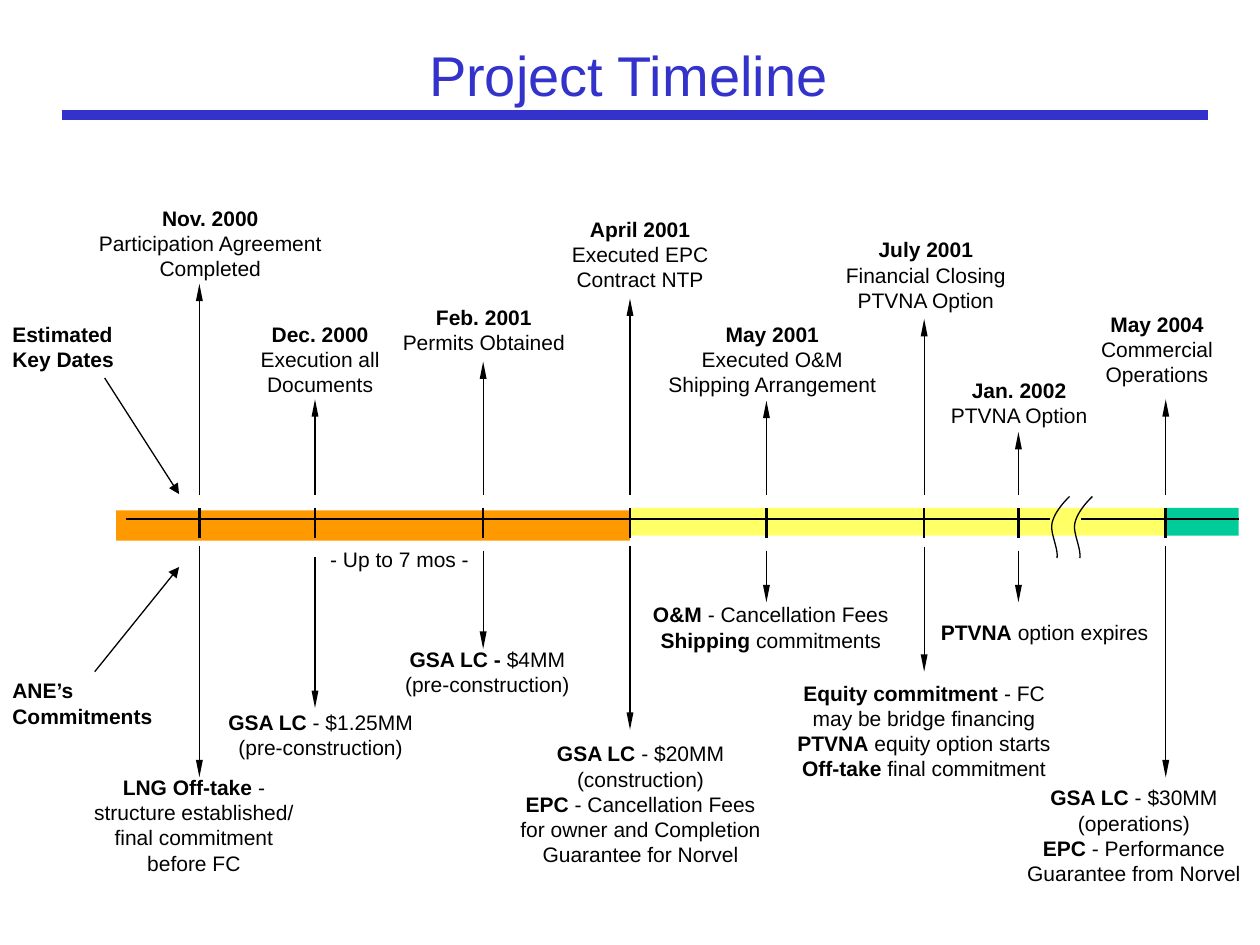
from dataclasses import dataclass
from typing import NamedTuple

from lxml import etree
from pptx import Presentation
from pptx.dml.color import RGBColor
from pptx.enum.shapes import MSO_CONNECTOR, MSO_SHAPE
from pptx.enum.text import MSO_ANCHOR, PP_ALIGN
from pptx.oxml.ns import qn
from pptx.util import Cm, Pt

STRAIGHT = MSO_CONNECTOR.STRAIGHT
RECTANGLE = MSO_SHAPE.RECTANGLE
MIDDLE = MSO_ANCHOR.MIDDLE
LEFT, CENTER = PP_ALIGN.LEFT, PP_ALIGN.CENTER


@dataclass(frozen=True)
class Theme:
    font: str = "Arial"
    title_size: float = 32
    text_size: float = 12
    title: str = "3333CC"
    ink: str = "000000"
    development: str = "FF9900"
    construction: str = "FFFF66"
    operations: str = "00CC99"
    thin: float = 0.75
    tick: float = 1.5
    rule: float = 6


class Box(NamedTuple):
    left: float
    top: float
    width: float
    height: float

    def point(self, x, y):
        return Cm(self.left + x), Cm(self.top + y)


class Label(NamedTuple):
    left: float
    top: float
    width: float
    lines: int
    text: str


class Milestone(NamedTuple):
    x: float
    rise_to: float
    fall_from: float
    fall_to: float
    date: Label
    commitment: Label


THEME = Theme()
AXIS_Y = 6.46
TICK_TOP, TICK_LENGTH = 6.24, 0.6
RISE_FROM = 5.98
LINE_HEIGHT, TEXT_MARGIN = 0.51, 0.25
NARROW_HEAD = ("sm", "lg")
MEDIUM_HEAD = ("med", "med")

PHASES = [
    (12.7, 6.24, 10.8, 0.56, THEME.construction),
    (2.34, 6.29, 10.36, 0.61, THEME.development),
    (23.5, 6.24, 1.47, 0.56, THEME.operations),
]
BREAK_CURVES = [
    [(21.56, 6.01), (21.41, 6.16), (21.26, 6.34), (21.21, 6.54)],
    [(21.21, 6.54), (21.16, 6.74), (21.34, 7.05), (21.31, 7.25)],
]
BREAK_OFFSETS = [0, 0.46]
CURVE_STEPS = 10

MILESTONES = [
    Milestone(4.02, 1.72, 7, 11.67,
              Label(1.7, 0.01, 5.08, 3, "**Nov. 2000**\nParticipation Agreement Completed"),
              Label(1.47, 11.49, 4.88, 4,
                    "**LNG Off-take** - structure established/ final commitment before FC")),
    Milestone(6.35, 4.05, 7.23, 10.27,
              Label(4.65, 2.35, 3.61, 3, "**Dec. 2000**\nExecution all Documents"),
              Label(4.24, 10.17, 4.45, 2, "**GSA LC** - $1.25MM\n(pre-construction)")),
    Milestone(9.74, 3.29, 7.1, 9.08,
              Label(7.85, 2.02, 3.81, 2, "**Feb. 2001**\nPermits Obtained"),
              Label(7.82, 8.9, 4.01, 2, "**GSA LC - **$4MM\n(pre-construction)")),
    Milestone(12.7, 2.02, 7, 10.71,
              Label(11, 0.24, 3.81, 3, "**April 2001**\nExecuted EPC Contract NTP"),
              Label(10.16, 10.81, 5.51, 5,
                    "**GSA LC** - $20MM\n(construction)\n**EPC** - Cancellation Fees\n"
                    "for owner and Completion Guarantee for Norvel")),
    Milestone(15.45, 4.08, 7.1, 8.14,
              Label(13.13, 2.35, 4.88, 3, "**May 2001**\nExecuted O&M\nShipping Arrangement"),
              Label(12.9, 8.01, 5.28, 2,
                    "**O&M** - Cancellation Fees\n**Shipping** commitments")),
    Milestone(18.63, 2.43, 7.02, 9.54,
              Label(16.61, 0.65, 4.11, 3, "**July 2001**\nFinancial Closing\nPTVNA Option"),
              Label(15.67, 9.59, 5.92, 4,
                    "**Equity commitment** - FC may be bridge financing\n"
                    "**PTVNA** equity option starts\n**Off-take** final commitment")),
    Milestone(20.53, 4.71, 7.1, 8.14,
              Label(18.64, 3.49, 3.81, 2, "**Jan. 2002**\nPTVNA Option"),
              Label(18.42, 8.37, 5.28, 1, "**PTVNA** option expires")),
    Milestone(23.5, 4.05, 7, 11.67,
              Label(21.79, 2.15, 3.07, 3, "**May 2004**\nCommercial\nOperations"),
              Label(20.32, 11.7, 5.08, 4,
                    "**GSA LC** - $30MM\n(operations)\n"
                    "**EPC** - Performance Guarantee from Norvel")),
]
DURATION = Label(6.15, 6.9, 3.81, 1, "- Up to 7 mos -")
ROW_HEADINGS = [
    (Label(0, 2.35, 3.61, 2, "**Estimated**\n**Key Dates**"), (2.11, 3.62), (3.61, 5.96)),
    (Label(0, 9.54, 3.61, 2, "**ANE’s**\n**Commitments**"), (1.91, 9.54), (3.61, 7.43)),
]


def color(value):
    return RGBColor.from_string(value)


def add_line(slide, box, start, end, width=THEME.thin, ink=THEME.ink, head=None):
    connector = slide.shapes.add_connector(STRAIGHT, *box.point(*start), *box.point(*end))
    connector.line.color.rgb = color(ink)
    connector.line.width = Pt(width)
    if head:
        etree.SubElement(connector.line._get_or_add_ln(), qn("a:tailEnd"),
                         type="triangle", w=head[0], len=head[1])
    etree.SubElement(connector._element.spPr, qn("a:effectLst"))


def add_label(slide, box, label, alignment=CENTER):
    height = label.lines * LINE_HEIGHT + TEXT_MARGIN
    shape = slide.shapes.add_textbox(*box.point(label.left, label.top),
                                     Cm(label.width), Cm(height))
    frame = shape.text_frame
    frame.word_wrap = True
    for index, line in enumerate(label.text.split("\n")):
        paragraph = frame.add_paragraph() if index else frame.paragraphs[0]
        paragraph.alignment = alignment
        paragraph.font.name = THEME.font
        paragraph.font.size = Pt(THEME.text_size)
        paragraph.font.color.rgb = color(THEME.ink)
        for position, part in enumerate(line.split("**")):
            if part:
                run = paragraph.add_run()
                run.text = part
                run.font.bold = position % 2 == 1


def bezier_point(controls, t):
    weights = ((1 - t) ** 3, 3 * t * (1 - t) ** 2, 3 * t ** 2 * (1 - t), t ** 3)
    return tuple(sum(weight * value for weight, value in zip(weights, values))
                 for values in zip(*controls))


def add_break(slide, box, offset):
    points = [box.point(x + offset, y)
              for controls in BREAK_CURVES
              for x, y in (bezier_point(controls, step / CURVE_STEPS)
                           for step in range(CURVE_STEPS + 1))]
    builder = slide.shapes.build_freeform(*points[0])
    builder.add_line_segments(points[1:], close=False)
    shape = builder.convert_to_shape()
    shape.shadow.inherit = False
    shape.fill.background()
    shape.line.color.rgb = color(THEME.ink)
    shape.line.width = Pt(THEME.thin)


def draw_header(slide, box):
    title = slide.shapes.title
    title.left, title.top = box.point(0, 0)
    title.width, title.height = Cm(box.width), Cm(box.height)
    title.text_frame.text = "Project Timeline"
    title.text_frame.vertical_anchor = MIDDLE
    paragraph = title.text_frame.paragraphs[0]
    paragraph.alignment = CENTER
    paragraph.font.name = THEME.font
    paragraph.font.size = Pt(THEME.title_size)
    paragraph.font.color.rgb = color(THEME.title)
    add_line(slide, box, (0, 1.89), (box.width + 0.25, 1.89), THEME.rule, THEME.title)


def draw_axis(slide, box):
    for left, top, width, height, fill in PHASES:
        phase = slide.shapes.add_shape(RECTANGLE, *box.point(left, top), Cm(width), Cm(height))
        phase.shadow.inherit = False
        phase.fill.solid()
        phase.fill.fore_color.rgb = color(fill)
        phase.line.fill.background()
    for offset in BREAK_OFFSETS:
        add_break(slide, box, offset)
    for start, end in ((2.54, 21.16), (21.79, 24.97)):
        add_line(slide, box, (start, AXIS_Y), (end, AXIS_Y))


def draw_milestones(slide, box):
    for milestone in MILESTONES:
        x = milestone.x
        add_line(slide, box, (x, TICK_TOP), (x, TICK_TOP + TICK_LENGTH), THEME.tick)
        add_line(slide, box, (x, RISE_FROM), (x, milestone.rise_to), head=NARROW_HEAD)
        add_line(slide, box, (x, milestone.fall_from), (x, milestone.fall_to), head=NARROW_HEAD)
        add_label(slide, box, milestone.date)
        add_label(slide, box, milestone.commitment)
    add_label(slide, box, DURATION)


def draw_row_headings(slide, box):
    for label, start, end in ROW_HEADINGS:
        add_label(slide, box, label, LEFT)
        add_line(slide, box, start, end, head=MEDIUM_HEAD)


def main():
    presentation = Presentation()
    presentation.slide_width, presentation.slide_height = Cm(25.4), Cm(19.05)
    slide = presentation.slides.add_slide(presentation.slide_layouts[5])
    draw_header(slide, Box(1.24, 0.43, 22.86, 2.11))
    timeline = Box(0, 4, 25.4, 14)
    draw_axis(slide, timeline)
    draw_milestones(slide, timeline)
    draw_row_headings(slide, timeline)
    presentation.save("out.pptx")


if __name__ == "__main__":
    main()
